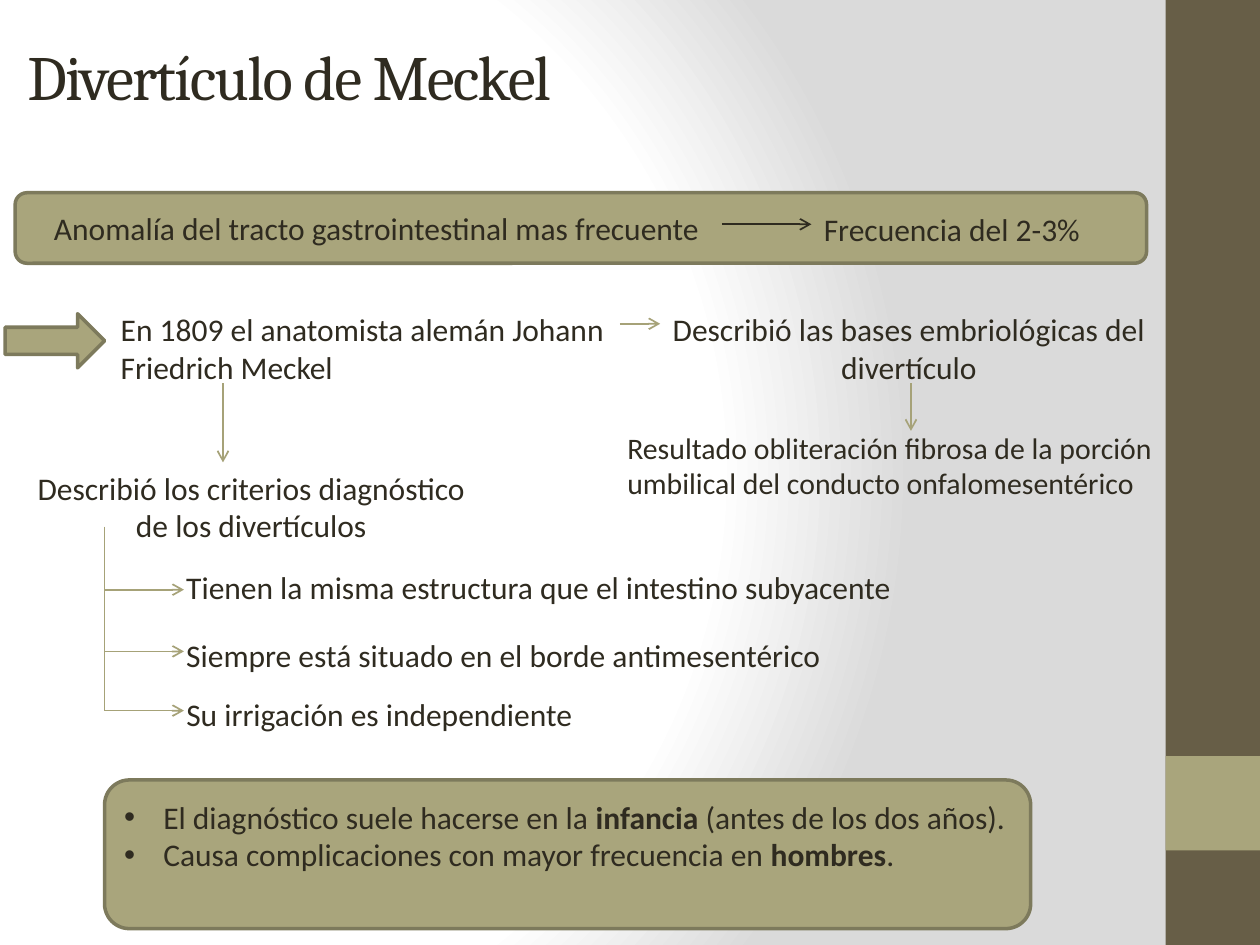
from pptx import Presentation
from pptx.dml.color import RGBColor
from pptx.enum.shapes import MSO_CONNECTOR, MSO_SHAPE
from pptx.enum.text import MSO_ANCHOR, PP_ALIGN
from pptx.oxml import parse_xml
from pptx.oxml.ns import nsdecls, qn
from pptx.util import Inches, Pt
from lxml.etree import SubElement

COLORS = {
    "text": "2F2B20",
    "band": "675E47",
    "accent": "A9A57C",
    "outline": "7D7A5C",
    "arrow": "A6A278",
    "white": "FFFFFF",
    "grey": "DADADA",
}


def rgb(name):
    return RGBColor.from_string(COLORS[name])


class SlideBuilder:
    body_font = "Calibri"
    title_font = "Cambria"
    body_size = 18

    def __init__(self, page):
        self.page = page

    def background(self):
        """Radial gradient, white to grey, centred on the left."""
        stops = "".join(
            f'<a:gs pos="{place * 1000}"><a:srgbClr val="{COLORS[name]}"/></a:gs>'
            for place, name in ((0, "white"), (75, "white"), (100, "grey")))
        self.page.element.cSld.insert(0, parse_xml(
            f'<p:bg {nsdecls("p", "a")}><p:bgPr><a:gradFill rotWithShape="1">'
            f'<a:gsLst>{stops}</a:gsLst><a:path path="circle">'
            '<a:fillToRect l="20000" t="50000" r="100000" b="50000"/></a:path>'
            '</a:gradFill><a:effectLst/></p:bgPr></p:bg>'))

    def style(self, span, size=None, font=None):
        span.font.size = Pt(size or self.body_size)
        span.font.name = font or self.body_font
        span.font.color.rgb = rgb("text")

    def shape(self, kind, left, top, width, height, fill="accent", outline=None):
        shape = self.page.shapes.add_shape(
            kind, Inches(left), Inches(top), Inches(width), Inches(height))
        shape.shadow.inherit = False
        shape.fill.solid()
        shape.fill.fore_color.rgb = rgb(fill)
        if outline:
            shape.line.color.rgb = rgb(outline)
            shape.line.width = Pt(2)
        else:
            shape.line.fill.background()
        return shape

    def text(self, left, top, width, height, lines, size=None, center_last=False):
        box = self.page.shapes.add_textbox(
            Inches(left), Inches(top), Inches(width), Inches(height))
        frame = box.text_frame
        frame.word_wrap = False
        frame.text = lines
        for para in frame.paragraphs:
            for span in para.runs:
                self.style(span, size)
        if center_last:
            frame.paragraphs[-1].alignment = PP_ALIGN.CENTER
        return box

    def title(self, left, top, width, height, words):
        box = self.text(left, top, width, height, words)
        box.text_frame.word_wrap = True
        box.text_frame.vertical_anchor = MSO_ANCHOR.MIDDLE
        span = box.text_frame.paragraphs[0].runs[0]
        self.style(span, 36, self.title_font)
        span.font._element.set("spc", "-100")

    def line(self, x1, y1, x2, y2, color="arrow", arrow=True):
        line = self.page.shapes.add_connector(
            MSO_CONNECTOR.STRAIGHT, Inches(x1), Inches(y1), Inches(x2), Inches(y2))
        line.line.color.rgb = rgb(color)
        line.line.width = Pt(1)
        if arrow:
            SubElement(line.line._get_or_add_ln(), qn("a:tailEnd"), type="arrow")
        SubElement(line._element.spPr, qn("a:effectLst"))

    def bullets(self, shape, items):
        """Each item is a list of (words, bold) pairs."""
        frame = shape.text_frame
        frame.word_wrap = True
        frame.vertical_anchor = MSO_ANCHOR.MIDDLE
        frame.margin_bottom = Inches(0.35)
        for number, item in enumerate(items):
            para = frame.add_paragraph() if number else frame.paragraphs[0]
            para.alignment = PP_ALIGN.LEFT
            properties = para._p.get_or_add_pPr()
            indent = Inches(0.31)
            properties.set("marL", str(indent))
            properties.set("indent", str(-indent))
            SubElement(properties, qn("a:buFont"), typeface="Arial")
            SubElement(properties, qn("a:buChar"), char="•")
            for words, bold in item:
                span = para.add_run()
                span.text = words
                self.style(span)
                span.font.bold = bold


def main():
    deck = Presentation()
    deck.slide_width, deck.slide_height = Inches(10), Inches(7.5)
    slide = SlideBuilder(deck.slides.add_slide(deck.slide_layouts[6]))

    # Background and side band
    slide.background()
    slide.shape(MSO_SHAPE.RECTANGLE, 9.25, 0, 0.75, 7.5, "band")
    slide.shape(MSO_SHAPE.RECTANGLE, 9.25, 6, 0.75, 0.75)

    # Title and frequency banner
    slide.title(0.12, -0.03, 8.17, 1.25, "Divertículo de Meckel")
    slide.shape(MSO_SHAPE.ROUNDED_RECTANGLE, 0.12, 1.53, 8.98, 0.56, outline="outline")
    slide.text(0.33, 1.61, 5.38, 0.4, "Anomalía del tracto gastrointestinal mas frecuente")
    slide.line(5.73, 1.78, 6.44, 1.78, "text")
    slide.text(6.44, 1.62, 2.26, 0.4, "Frecuencia del 2-3%")

    # History: discovery and embryology
    slide.shape(MSO_SHAPE.RIGHT_ARROW, 0.04, 2.49, 0.79, 0.43, outline="outline")
    slide.text(0.86, 2.41, 4.08, 1.01,
               "En 1809 el anatomista alemán Johann\nFriedrich Meckel")
    slide.line(4.92, 2.57, 5.24, 2.57)
    slide.text(5.24, 2.41, 3.99, 1.01,
               "Describió las bases embriológicas del\ndivertículo", center_last=True)
    slide.line(7.23, 3.04, 7.23, 3.42)
    slide.text(4.88, 3.36, 4.45, 0.96,
               "Resultado obliteración fibrosa de la porción\n"
               "umbilical del conducto onfalomesentérico", size=17)

    # Diagnostic criteria with a branching trunk
    slide.line(1.77, 3.04, 1.77, 3.67)
    slide.text(0.2, 3.67, 3.63, 1.01,
               "Describió los criterios diagnóstico\nde los divertículos",
               center_last=True)
    trunk = 0.83
    slide.line(trunk, 4.18, trunk, 5.64, arrow=False)
    criteria = (
        (4.68, 4.46, 5.86, "Tienen la misma estructura que el intestino subyacente"),
        (5.17, 5, 5.3, "Siempre está situado en el borde antimesentérico"),
        (5.64, 5.47, 3.31, "Su irrigación es independiente"),
    )
    for branch, top, width, words in criteria:
        slide.line(trunk, branch, 1.46, branch)
        slide.text(1.38, top, width, 0.4, words)

    # Clinical notes
    notes = slide.shape(MSO_SHAPE.ROUNDED_RECTANGLE, 0.83, 6.19, 7.35, 1.18,
                        outline="outline")
    slide.bullets(notes, [
        [("El diagnóstico suele hacerse en la ", False), ("infancia", True),
         (" (antes de los dos años).", False)],
        [("Causa complicaciones con mayor frecuencia en ", False),
         ("hombres", True), (".", False)],
    ])

    deck.save("out.pptx")


if __name__ == "__main__":
    main()
